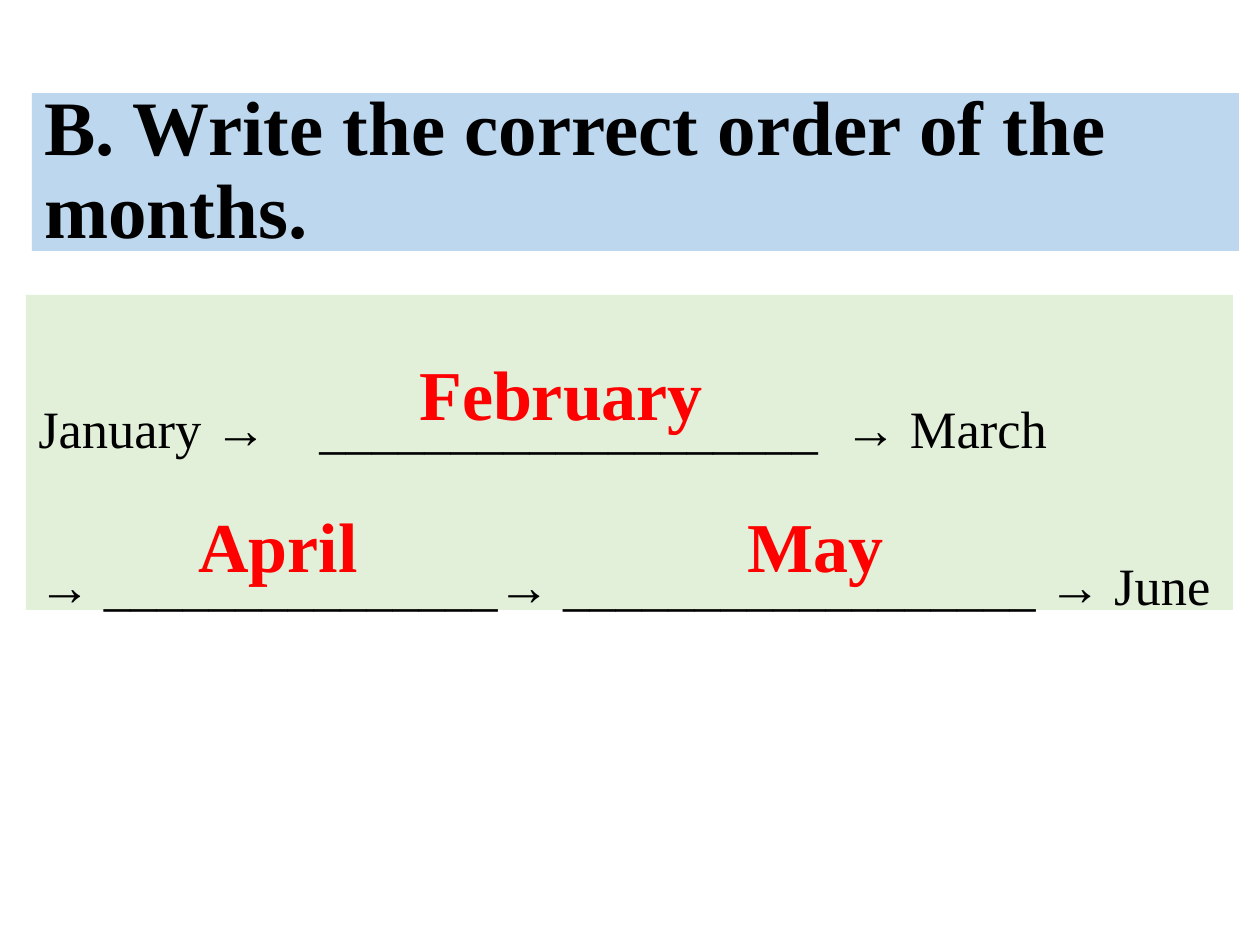
"""Build a worksheet slide on the order of the months."""
from lxml import etree
from pptx import Presentation
from pptx.dml.color import RGBColor
from pptx.enum.shapes import MSO_SHAPE
from pptx.enum.text import MSO_ANCHOR, PP_ALIGN
from pptx.oxml.ns import qn


def px(length):
    return round(length * 914400 / 126)


def style(paragraph, size, color, bold=False):
    paragraph.alignment = PP_ALIGN.LEFT
    for run in paragraph.runs:
        run.font.name = "Times New Roman"
        run.font.size = size * 12700
        run.font.bold = bold
        run.font.color.rgb = RGBColor.from_string(color)


presentation = Presentation()
presentation.slide_width, presentation.slide_height = px(1260), px(945)
slide = presentation.slides.add_slide(presentation.slide_layouts[6])

panels = [
    (32, 93, 158, "BDD7EE", MSO_ANCHOR.MIDDLE, 0.9, 44, True,
     "B. Write the correct order of the months."),
    (26, 295, 315, "E2F0D9", MSO_ANCHOR.TOP, 2.5, 30, False,
     "January →\t___________________\t→ March\n"
     "→ _______________→ __________________ → June"),
]
for left, top, height, fill, anchor, spacing, size, bold, text in panels:
    shape = slide.shapes.add_shape(
        MSO_SHAPE.RECTANGLE, px(left), px(top), px(1207), px(height))
    shape.shadow.inherit = False
    shape.fill.solid()
    shape.fill.fore_color.rgb = RGBColor.from_string(fill)
    shape.line.fill.background()
    text_frame = shape.text_frame
    text_frame.word_wrap = True
    text_frame.vertical_anchor = anchor
    text_frame.text = text
    for paragraph in text_frame.paragraphs:
        paragraph.line_spacing = spacing
        if "\t" in paragraph.text:
            properties = paragraph._p.get_or_add_pPr()
            tabs = etree.SubElement(properties, qn("a:tabLst"))
            for position in (281, 806):
                etree.SubElement(tabs, qn("a:tab"), pos=str(px(position)), algn="l")
        style(paragraph, size, "000000", bold)

answers = [("February", 407, 344, 312), ("April", 186, 496, 186), ("May", 735, 496, 164)]
for month, left, top, width in answers:
    answer = slide.shapes.add_textbox(px(left), px(top), px(width), px(97))
    answer.text_frame.word_wrap = False
    answer.text_frame.text = month
    style(answer.text_frame.paragraphs[0], 40, "FF0000", True)

presentation.save("out.pptx")
